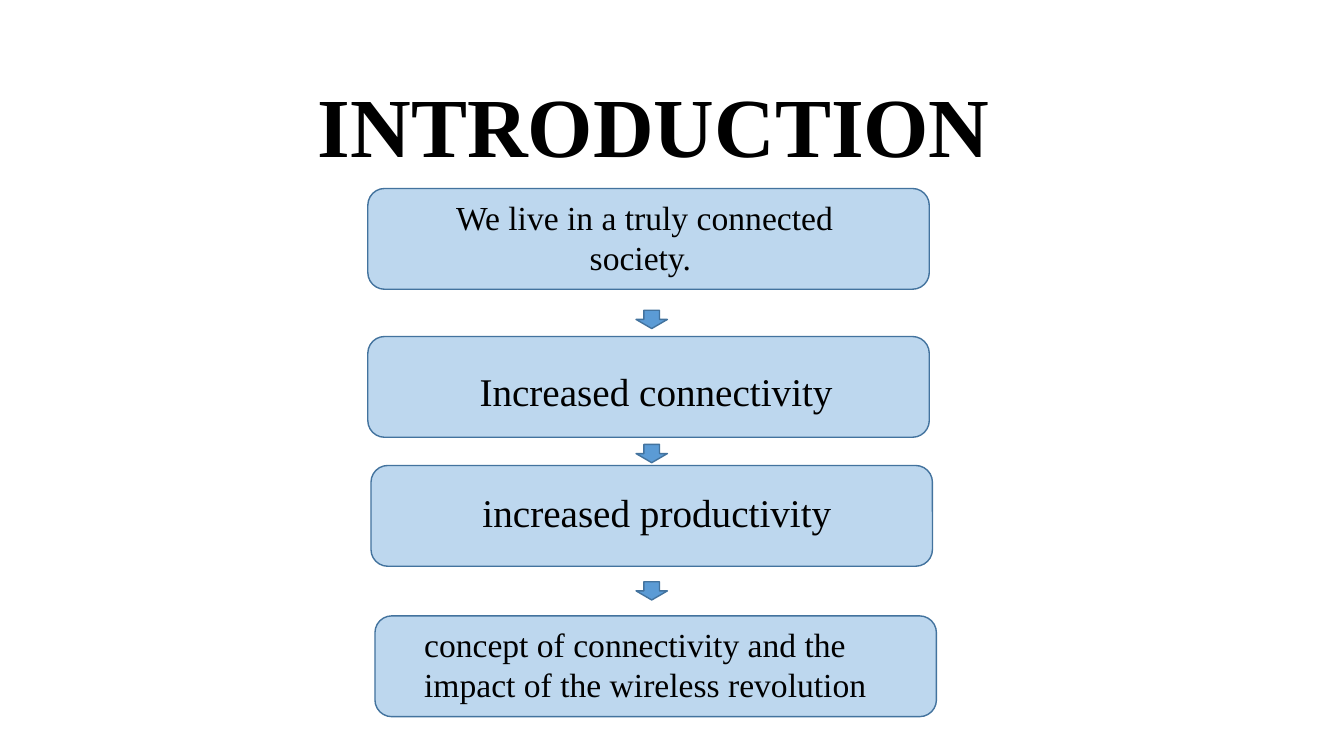
"""Build the introduction slide: four steps linked by down arrows."""
from dataclasses import dataclass

import pptx
import pptx.dml.color
import pptx.enum.shapes
import pptx.enum.text
import pptx.slide
import pptx.util

Cm = pptx.util.Cm
Align = pptx.enum.text.PP_ALIGN
Anchor = pptx.enum.text.MSO_ANCHOR
Preset = pptx.enum.shapes.MSO_SHAPE

COLORS = {"text": "000000", "step": "BDD7EE", "arrow": "5B9BD5", "outline": "43739E"}
FONT = "Times New Roman"
STEP_WIDTH, STEP_HEIGHT = 14.15, 2.54
ARROW_LEFT, ARROW_WIDTH, ARROW_HEIGHT = 16.03, 0.79, 0.46
ARROW_TOPS = (7.82, 11.2, 14.66)


@dataclass(frozen=True)
class Area:
    left: float
    top: float
    width: float
    height: float

    def lengths(self) -> tuple[pptx.util.Length, ...]:
        return tuple(Cm(value) for value in (self.left, self.top, self.width, self.height))


@dataclass(frozen=True)
class Label:
    text: str
    area: Area
    size: int
    align: Align = Align.LEFT
    bold: bool = False
    anchor: Anchor = Anchor.TOP
    line_spacing: float = 1.0


@dataclass(frozen=True)
class Step:
    left: float
    top: float
    label: Label


TITLE = Label("INTRODUCTION", Area(3.78, 0.74, 25.4, 3.81), 60, Align.CENTER,
              bold=True, anchor=Anchor.BOTTOM, line_spacing=0.9)
STEPS = (
    Step(9.27, 4.75, Label("We live in a truly connected society. ",
                           Area(10.49, 4.83, 11.51, 3.07), 24, Align.CENTER)),
    Step(9.27, 8.48, Label("Increased connectivity",
                           Area(10.49, 9.14, 12.09, 1.45), 28, Align.CENTER)),
    Step(9.35, 11.73, Label("increased productivity",
                            Area(11.91, 12.17, 10.64, 1.45), 28)),
    Step(9.45, 15.52, Label("concept of connectivity and the impact of the wireless revolution",
                            Area(10.44, 15.6, 12.14, 2.31), 24)),
)


def color(name: str) -> pptx.dml.color.RGBColor:
    return pptx.dml.color.RGBColor.from_string(COLORS[name])


def apply(target: object, values: dict[str, object]) -> None:
    for name, value in values.items():
        setattr(target, name, value)


def draw_shape(page: pptx.slide.Slide, preset: Preset, area: Area, fill: str) -> None:
    shape = page.shapes.add_shape(preset, *area.lengths())
    shape.shadow.inherit = False
    shape.fill.solid()
    shape.fill.fore_color.rgb = color(fill)
    shape.line.color.rgb = color("outline")
    shape.line.width = pptx.util.Pt(1)


def draw_label(page: pptx.slide.Slide, label: Label) -> None:
    frame = page.shapes.add_textbox(*label.area.lengths()).text_frame
    apply(frame, {"word_wrap": True, "vertical_anchor": label.anchor})
    para = frame.paragraphs[0]
    apply(para, {"alignment": label.align, "line_spacing": label.line_spacing})
    span = para.add_run()
    span.text = label.text
    apply(span.font, {"name": FONT, "size": pptx.util.Pt(label.size), "bold": label.bold})
    span.font.color.rgb = color("text")


def main() -> None:
    deck = pptx.Presentation()
    apply(deck, {"slide_width": Cm(33.87), "slide_height": Cm(19.05)})
    page = deck.slides.add_slide(deck.slide_layouts[6])
    draw_label(page, TITLE)
    for step in STEPS:
        area = Area(step.left, step.top, STEP_WIDTH, STEP_HEIGHT)
        draw_shape(page, Preset.ROUNDED_RECTANGLE, area, "step")
        draw_label(page, step.label)
    for top in ARROW_TOPS:
        area = Area(ARROW_LEFT, top, ARROW_WIDTH, ARROW_HEIGHT)
        draw_shape(page, Preset.DOWN_ARROW, area, "arrow")
    deck.save("out.pptx")


if __name__ == "__main__":
    main()
